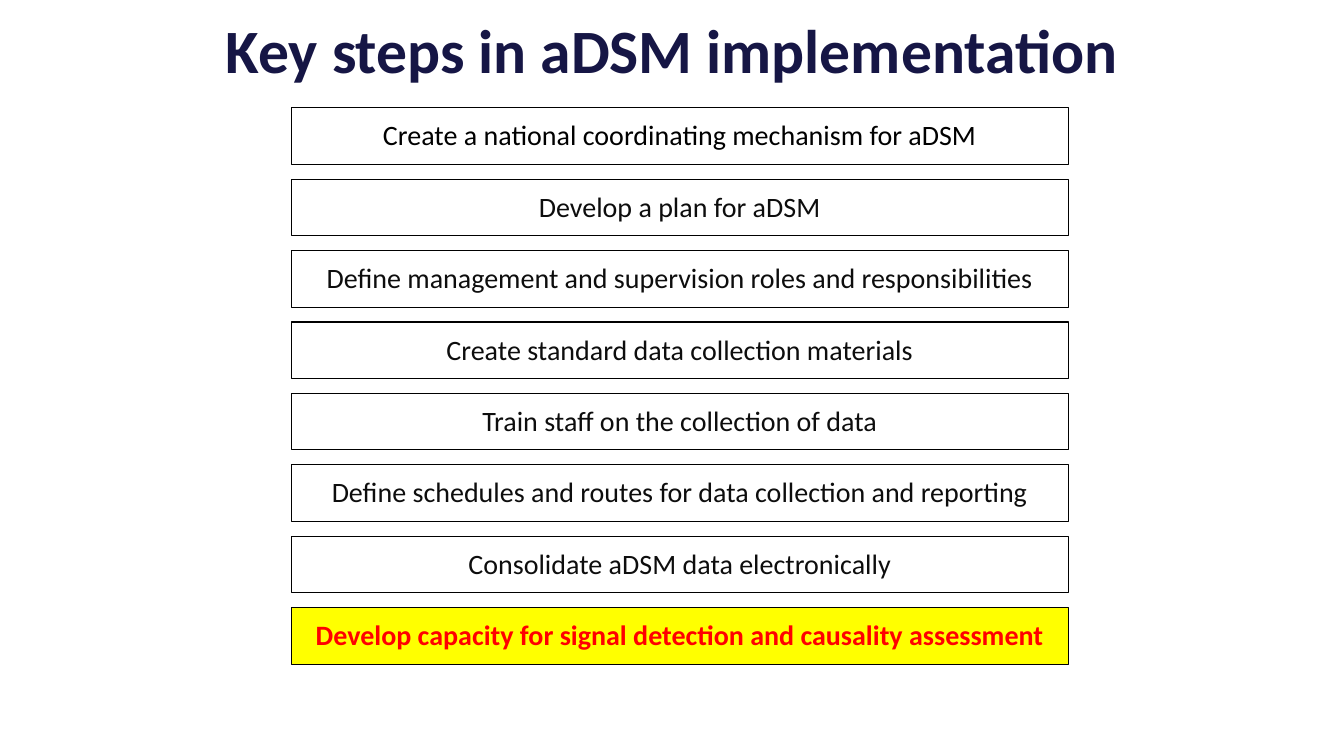
from pptx import Presentation
from pptx import util as u
from pptx.dml.color import RGBColor
from pptx.enum import shapes, text

TITLE = "Key steps in aDSM implementation"
PLAIN = {"color": "0D0D0D"}
STEPS = [  # wording, box fill, text format
    ("Create a national coordinating mechanism for aDSM", None, {"color": "000000"}),
    ("Develop a plan for aDSM", None, PLAIN),
    ("Define management and supervision roles and responsibilities", "FFFFFF", PLAIN),
    ("Create standard data collection materials", "FFFFFF", PLAIN),
    ("Train staff on the collection of data", "FFFFFF", PLAIN),
    ("Define schedules and routes for data collection and reporting", "FFFFFF", PLAIN),
    ("Consolidate aDSM data electronically", "FFFFFF", PLAIN),
    ("Develop capacity for signal detection and causality assessment", "FFFF00",
     {"color": "FF0000", "bold": True}),
]
LEFT, TOP, WIDTH, HEIGHT, PITCH = 208, 77, 555, 40.4, 51


def paint(fmt, color):
    fmt.rgb = RGBColor.from_string(color)


def write(shape, words, size=20, color="000000", bold=False,
          anchor=text.MSO_ANCHOR.TOP, line=None, after=None):
    frame = shape.text_frame
    frame.word_wrap = True
    frame.auto_size = text.MSO_AUTO_SIZE.NONE
    frame.vertical_anchor = anchor
    frame.text = words
    para = frame.paragraphs[0]
    para.alignment = text.PP_ALIGN.CENTER
    para.line_spacing = line
    para.space_after = after
    font = para.runs[0].font
    font.name, font.size, font.bold = "Calibri", u.Pt(size), bold
    paint(font.color, color)


def place(shape, *box):
    shape.left, shape.top, shape.width, shape.height = map(u.Pt, box)


def main():
    deck = Presentation()
    deck.slide_width, deck.slide_height = u.Pt(960), u.Pt(540)
    slide = deck.slides.add_slide(deck.slide_layouts[5])

    title = slide.shapes.title
    place(title, 151.2, 3.6, 658, 62.6)
    write(title, TITLE, size=44, color="161645", bold=True,
          anchor=text.MSO_ANCHOR.MIDDLE)

    group = slide.shapes.add_group_shape()
    for row, (words, fill, style) in enumerate(STEPS):
        box = group.shapes.add_shape(
            shapes.MSO_SHAPE.RECTANGLE,
            *map(u.Pt, (LEFT, TOP + row * PITCH, WIDTH, HEIGHT)))
        box.shadow.inherit = False
        if fill:
            box.fill.solid()
            paint(box.fill.fore_color, fill)
        else:
            box.fill.background()
        paint(box.line.color, "000000")
        box.line.width = u.Pt(0.75)
        write(box, words, line=1.15, after=u.Pt(10), **style)

    deck.save("out.pptx")


if __name__ == "__main__":
    main()
